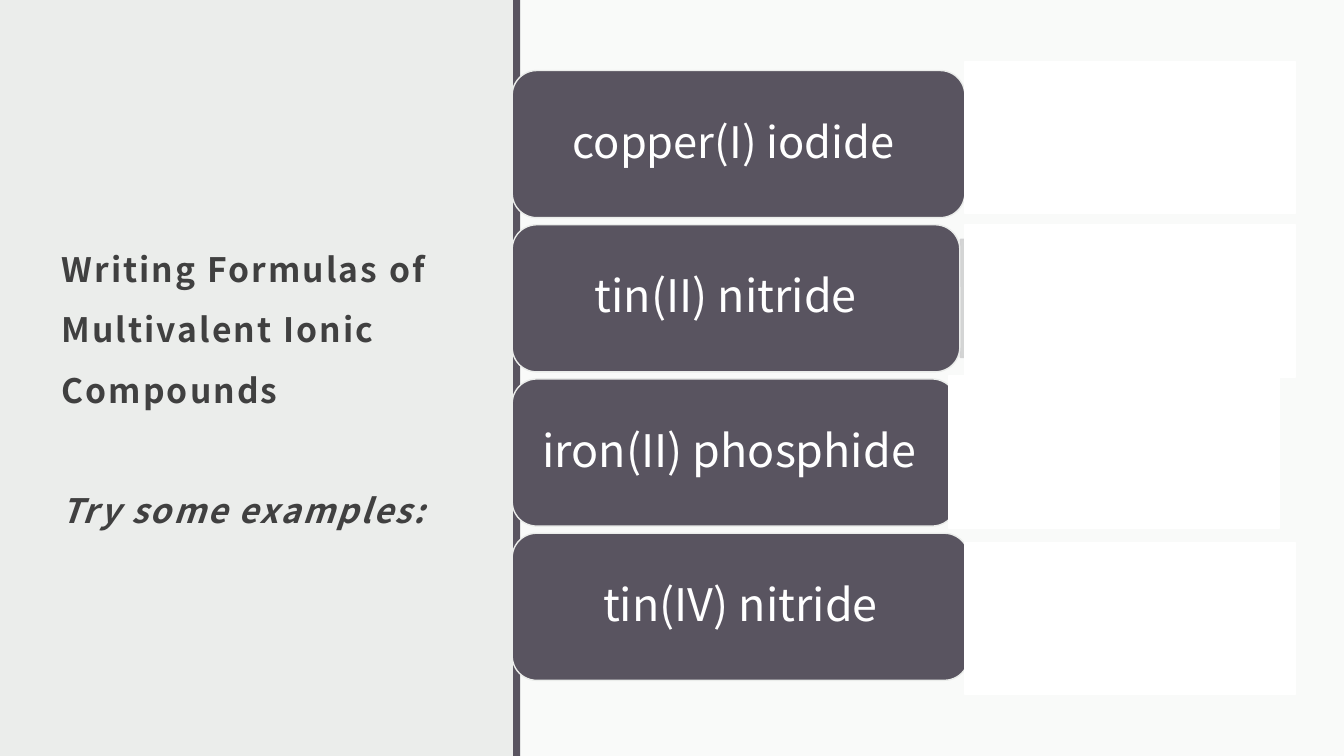
from pptx import Presentation
from pptx.util import Pt
from pptx.dml.color import RGBColor
from pptx.enum.shapes import MSO_SHAPE
from pptx.enum.text import MSO_ANCHOR, MSO_AUTO_SIZE, PP_ALIGN
from pptx.oxml.ns import qn
from lxml.etree import SubElement

PX = 9144  # 100 px to the inch
FONT = "Noto Sans CJK JP"
HEX = {"sage": "EBEDEB", "white": "FFFFFF", "plum": "595460",
       "gray": "D1D1D2", "ink": "404040"}

deck = Presentation()
deck.slide_width, deck.slide_height = 1333 * PX, 750 * PX
slide = deck.slides.add_slide(deck.slide_layouts[5])


def color(name):
    return RGBColor.from_string(HEX[name])


def block(kind, box, fill, line=None, alpha=100):
    shape = slide.shapes.add_shape(kind, *[n * PX for n in box])
    shape.shadow.inherit = False
    shape.fill.solid()
    shape.fill.fore_color.rgb = color(fill)
    if line:
        shape.line.color.rgb = color(line)
        shape.line.width = Pt(1)
    else:
        shape.line.fill.background()
    if alpha < 100:
        for tone in shape._element.spPr.iter(qn("a:srgbClr")):
            SubElement(tone, qn("a:alpha"), val=str(alpha * 1000))
    return shape


# Background, right panel and divider
slide.background.fill.solid()
slide.background.fill.fore_color.rgb = color("sage")
block(MSO_SHAPE.RECTANGLE, (516, 0, 817, 750), "white", alpha=75)
block(MSO_SHAPE.RECTANGLE, (509, 0, 7, 750), "plum")

# Title
title = slide.shapes.title
title.left, title.top, title.width, title.height = [
    n * PX for n in (49, 70, 395, 611)]
frame = title.text_frame
frame.text = "Writing Formulas of Multivalent Ionic Compounds\nTry some examples:"
frame.word_wrap = True
frame.auto_size = MSO_AUTO_SIZE.NONE
frame.vertical_anchor = MSO_ANCHOR.MIDDLE
frame.margin_left = frame.margin_right = frame.margin_top = 12 * PX
frame.margin_bottom = 10 * PX
for para in frame.paragraphs:
    para.alignment = PP_ALIGN.LEFT
    para.line_spacing = 1.5
    font = para.runs[0].font
    font.name, font.size, font.bold = FONT, Pt(24), True
    font.color.rgb = color("ink")
    para.runs[0]._r.get_or_add_rPr().set("spc", "150")
para.space_before = Pt(43)
font.italic = True

# Answer tab behind the second bar
tab = block(MSO_SHAPE.ROUND_2_SAME_RECTANGLE, (1049, 141, 117, 310),
            "gray", "gray", 90)
tab.rotation = 90

# Compound bars: name, width, text size, extra right inset
bars = [("copper(I) iodide", 449, 31, 10), ("tin(II) nitride", 444, 32, 20),
        ("iron(II) phosphide", 441, 32, 10), ("tin(IV) nitride", 453, 32, 0)]
for row, (name, width, size, inset) in enumerate(bars):
    bar = block(MSO_SHAPE.ROUNDED_RECTANGLE,
                (508, 70 + 153 * row, width, 146), "plum", "sage")
    frame = bar.text_frame
    frame.text = name
    frame.word_wrap = True
    frame.vertical_anchor = MSO_ANCHOR.MIDDLE
    frame.margin_left = 13 * PX
    frame.margin_right = (13 + inset) * PX
    para = frame.paragraphs[0]
    para.alignment = PP_ALIGN.CENTER
    para.line_spacing = 0.9
    font = para.runs[0].font
    font.name, font.size = FONT, Pt(size)
    font.color.rgb = color("white")

# White answer covers
for left, top in [(957, 61), (957, 223), (941, 373), (957, 538)]:
    block(MSO_SHAPE.RECTANGLE, (left, top, 328, 151), "white", "white")

deck.save("out.pptx")
